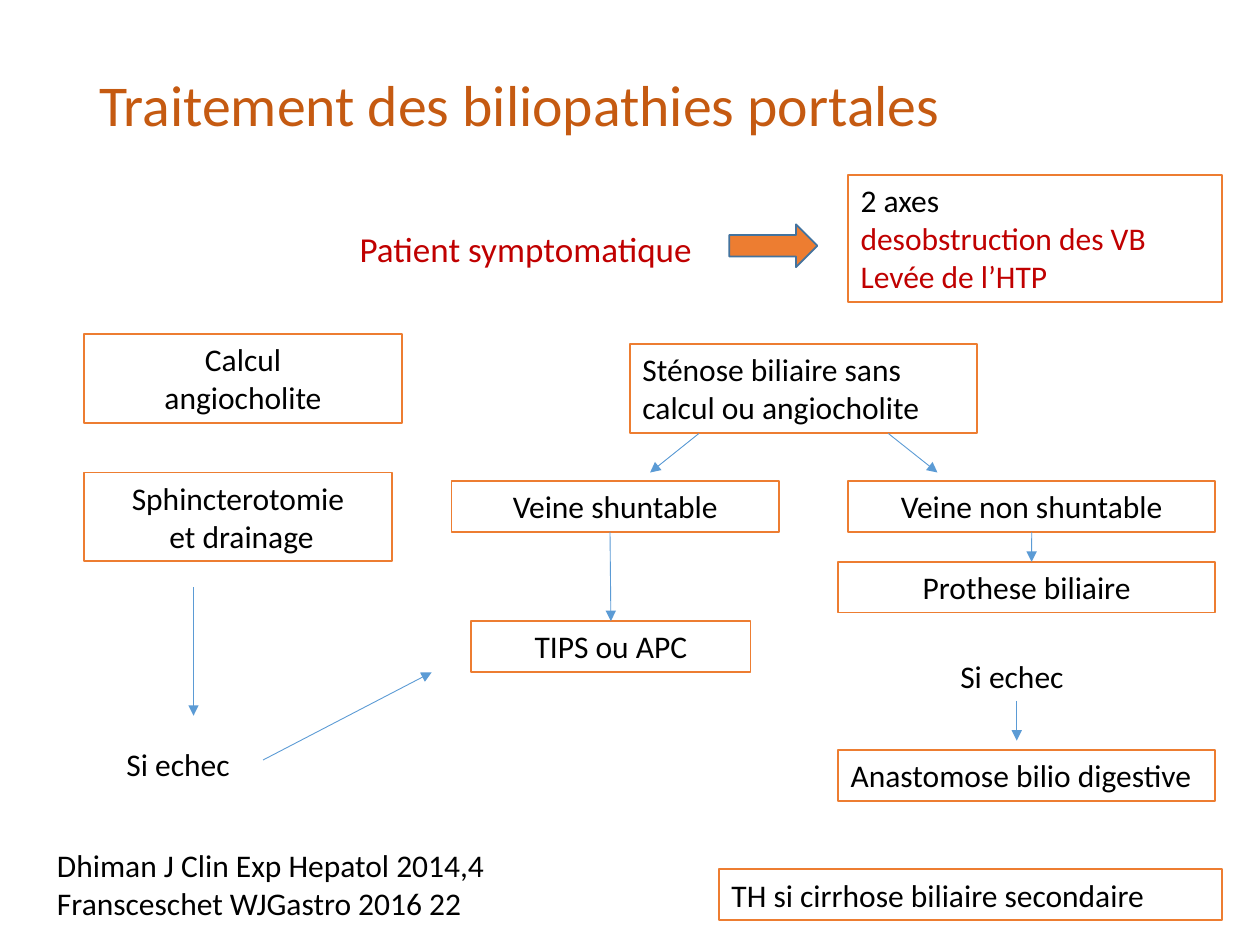
from dataclasses import dataclass
from typing import Optional

from pptx import Presentation
from pptx import util as u
from pptx.dml.color import RGBColor
from pptx.enum import shapes, text
from pptx.oxml.ns import qn
from lxml import etree

BLACK = RGBColor(0x00, 0x00, 0x00)
WHITE = RGBColor(0xFF, 0xFF, 0xFF)
RED = RGBColor(0xC0, 0x00, 0x00)
ORANGE = RGBColor(0xED, 0x7D, 0x31)
DARK_ORANGE = RGBColor(0xC5, 0x5A, 0x11)
BLUE = RGBColor(0x5B, 0x9B, 0xD5)
DARK_BLUE = RGBColor(0x43, 0x73, 0x9E)

LEFT, CENTER = text.PP_ALIGN.LEFT, text.PP_ALIGN.CENTER
TOP, BOTTOM = 0, 2
FONT = "Calibri"
LINE_FACTOR, VERTICAL_INSETS = 1.21, 7.2


@dataclass
class Label:
    key: str
    left: float
    top: float
    width: float
    lines: list[str]
    align: text.PP_ALIGN = CENTER
    framed: bool = True
    rows: int = 0  # rows after wrapping, when more than len(lines)
    size: float = 18
    colors: tuple[RGBColor, ...] = (BLACK,)  # the last one repeats

    @property
    def height(self) -> float:
        rows = self.rows or len(self.lines)
        return VERTICAL_INSETS + LINE_FACTOR * self.size * rows


@dataclass
class Arrow:
    start: tuple[float, float]
    end: tuple[float, float]
    source: Optional[str] = None
    target: Optional[str] = None


LABELS = [
    Label("patient", 198.4, 126.7, 226.8, ["Patient symptomatique"], LEFT, False,
          size=20, colors=(RED,)),
    Label("stones", 48.2, 190.8, 181.4, ["Calcul", "angiocholite"]),
    Label("drainage", 48.2, 270, 175.7, ["Sphincterotomie", " et drainage"]),
    Label("stenosis", 360, 196.6, 198.4,
          ["Sténose biliaire sans calcul ou angiocholite"], LEFT, rows=2),
    Label("shuntable", 258, 275, 187.2, ["Veine shuntable"]),
    Label("not shuntable", 484.7, 275, 209.7, ["Veine non shuntable"]),
    Label("tips", 269.3, 354.9, 159.6, ["TIPS ou APC"]),
    Label("axes", 484.7, 100.1, 213.8,
          ["2 axes", "desobstruction des VB", "Levée de l’HTP"], LEFT,
          colors=(BLACK, RED)),
    Label("stent", 479, 321.1, 215.4, ["Prothese biliaire"]),
    Label("drainage failure", 65.2, 422.3, 141.8, ["Si echec"], LEFT, False),
    Label("stent failure", 484.7, 372.2, 187.2, ["Si echec"], framed=False),
    Label("anastomosis", 479, 428.6, 215.4, ["Anastomose bilio digestive"], LEFT),
    Label("references", 25.5, 479.8, 283.7,
          ["Dhiman J Clin Exp Hepatol 2014,4", "Fransceschet WJGastro 2016 22"],
          LEFT, False),
    Label("transplant", 410.9, 496.8, 287.4,
          ["TH si cirrhose biliaire secondaire"], LEFT),
]

ARROWS = [
    Arrow((150.3, 434.3), (246.7, 384.2)),
    Arrow((581, 400.5), (581, 423.2)),
    Arrow((110.6, 335.5), (110.6, 409)),
    Arrow((348.6, 304), (349.2, 354.9), target="tips"),
    Arrow((589.5, 304), (589.5, 321.1), source="not shuntable"),
    Arrow((399.4, 247.7), (371.5, 270)),
    Arrow((507.6, 247.7), (535.7, 270)),
]


def apply_format(target, values: dict) -> None:
    for name, value in values.items():
        setattr(target, name, value)


def apply_font(font, size: float, color: RGBColor) -> None:
    apply_format(font, {"name": FONT, "size": u.Pt(size)})
    font.color.rgb = color


def paint(shape, fill: RGBColor, line: RGBColor) -> None:
    shape.shadow.inherit = False
    shape.fill.solid()
    shape.fill.fore_color.rgb = fill
    shape.line.color.rgb = line
    shape.line.width = u.Pt(1)


def add_label(slide, label: Label):
    place = [u.Pt(v) for v in (label.left, label.top, label.width, label.height)]
    if label.framed:
        shape = slide.shapes.add_shape(shapes.MSO_SHAPE.RECTANGLE, *place)
        paint(shape, WHITE, ORANGE)
    else:
        shape = slide.shapes.add_textbox(*place)
    frame = shape.text_frame
    apply_format(frame, {
        "word_wrap": True,
        "vertical_anchor": text.MSO_ANCHOR.TOP,
        "auto_size": text.MSO_AUTO_SIZE.SHAPE_TO_FIT_TEXT,
    })
    frame.text = "\n".join(label.lines)
    for index, paragraph in enumerate(frame.paragraphs):
        paragraph.alignment = label.align
        color = label.colors[min(index, len(label.colors) - 1)]
        apply_font(paragraph.runs[0].font, label.size, color)
    return shape


def add_arrow(slide, arrow: Arrow, boxes: dict) -> None:
    ends = [u.Pt(v) for v in (*arrow.start, *arrow.end)]
    connector = slide.shapes.add_connector(shapes.MSO_CONNECTOR.STRAIGHT, *ends)
    if arrow.source:
        connector.begin_connect(boxes[arrow.source], BOTTOM)
    if arrow.target:
        connector.end_connect(boxes[arrow.target], TOP)
    connector.line.color.rgb = BLUE
    connector.line.width = u.Pt(0.5)
    line = connector.line._get_or_add_ln()
    etree.SubElement(line, qn("a:tailEnd"), type="triangle")
    etree.SubElement(connector._element.spPr, qn("a:effectLst"))


def add_title(slide, wording: str) -> None:
    title = slide.shapes.title
    apply_format(title, {"left": u.Pt(49.5), "top": u.Pt(9.4),
                         "width": u.Pt(621), "height": u.Pt(104.4)})
    title.text_frame.text = wording
    apply_format(title.text_frame, {"word_wrap": True,
                                    "vertical_anchor": text.MSO_ANCHOR.MIDDLE})
    paragraph = title.text_frame.paragraphs[0]
    apply_format(paragraph, {"alignment": LEFT, "line_spacing": 0.9})
    apply_font(paragraph.runs[0].font, 33, DARK_ORANGE)


def main() -> None:
    presentation = Presentation()
    apply_format(presentation, {"slide_width": u.Pt(720), "slide_height": u.Pt(540)})
    slide = presentation.slides.add_slide(presentation.slide_layouts[5])
    add_title(slide, "Traitement des biliopathies portales")
    boxes = {label.key: add_label(slide, label) for label in LABELS}
    for arrow in ARROWS:
        add_arrow(slide, arrow, boxes)
    block_arrow = slide.shapes.add_shape(
        shapes.MSO_SHAPE.RIGHT_ARROW, u.Pt(416.7), u.Pt(128.2), u.Pt(50.4), u.Pt(24.5))
    paint(block_arrow, ORANGE, DARK_BLUE)
    presentation.save("out.pptx")


if __name__ == "__main__":
    main()
